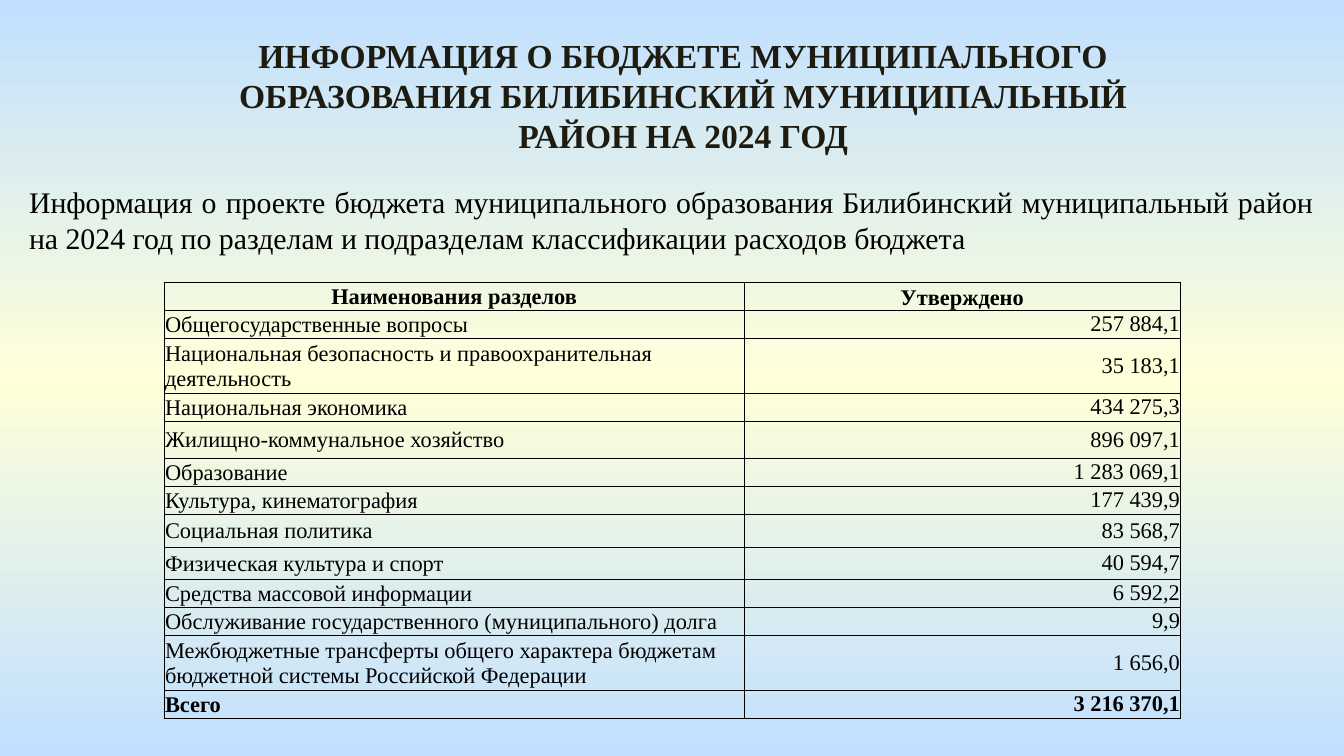
import copy

import pptx
import pptx.dml.color
import pptx.enum.text
import pptx.oxml
import pptx.oxml.ns
import pptx.util

Cm = pptx.util.Cm
Pt = pptx.util.Pt
ALIGN = pptx.enum.text.PP_ALIGN
ANCHOR = pptx.enum.text.MSO_ANCHOR

# Content
TITLE = ("ИНФОРМАЦИЯ О БЮДЖЕТЕ МУНИЦИПАЛЬНОГО ОБРАЗОВАНИЯ "
         "БИЛИБИНСКИЙ МУНИЦИПАЛЬНЫЙ РАЙОН НА 2024 ГОД")
SUBTITLE = ("Информация о проекте бюджета муниципального образования Билибинский "
            "муниципальный район на 2024 год по разделам и подразделам "
            "классификации расходов бюджета")
# Section name, approved amount, row height in cm
ROWS = [
    ("Наименования разделов", "Утверждено", 0.53),
    ("Общегосударственные вопросы", "257 884,1", 0.53),
    ("Национальная безопасность и правоохранительная деятельность", "35 183,1", 1.04),
    ("Национальная экономика", "434 275,3", 0.53),
    ("Жилищно-коммунальное хозяйство", "896 097,1", 0.7),
    ("Образование", "1 283 069,1", 0.53),
    ("Культура, кинематография", "177 439,9", 0.53),
    ("Социальная политика", "83 568,7", 0.62),
    ("Физическая культура и спорт", "40 594,7", 0.61),
    ("Средства массовой информации", "6 592,2", 0.53),
    ("Обслуживание государственного (муниципального) долга", "9,9", 0.53),
    ("Межбюджетные трансферты общего характера бюджетам бюджетной системы "
     "Российской Федерации", "1 656,0", 1.04),
    ("Всего", "3 216 370,1", 0.53),
]
COLUMNS = (10.97, 8.23)
FONT = "Times New Roman"
COLORS = {"sky": "C1E0FF", "cream": "FFFFD9", "title": "1E1C11", "black": "000000"}


def rgb(name):
    return pptx.dml.color.RGBColor.from_string(COLORS[name])


def write(frame, text, size=12, color="black", bold=False, align=ALIGN.LEFT):
    frame.word_wrap = True
    para = frame.paragraphs[0]
    para.alignment = align
    span = para.add_run()
    span.text = text
    span.font.name = FONT
    span.font.size = Pt(size)
    span.font.bold = bold
    span.font.color.rgb = rgb(color)


def add_borders(cell):
    properties = cell._tc.get_or_add_tcPr()
    for side in ("lnL", "lnR", "lnT", "lnB"):
        properties.append(pptx.oxml.parse_xml(
            f'<a:{side} {pptx.oxml.ns.nsdecls("a")} w="{Pt(0.5)}"><a:solidFill>'
            f'<a:srgbClr val="{COLORS["black"]}"/></a:solidFill></a:{side}>'))


deck = pptx.Presentation()
deck.slide_width, deck.slide_height = Cm(25.4), Cm(14.29)
page = deck.slides.add_slide(deck.slide_layouts[6])

# Background: sky, cream, sky from top to bottom
fill = page.background.fill
fill.gradient()
fill.gradient_angle = 270
for stop in fill.gradient_stops:
    stop.color.rgb = rgb("sky")
stops = page.element.find(".//" + pptx.oxml.ns.qn("a:gsLst"))
stops.insert(1, copy.deepcopy(stops[0]))
for stop, position in zip(fill.gradient_stops, (0, 0.5, 1)):
    stop.position = position
fill.gradient_stops[1].color.rgb = rgb("cream")

# Title and subtitle
box = page.shapes.add_textbox(Cm(3.1), Cm(0.53), Cm(19.63), Cm(2.57))
write(box.text_frame, TITLE, size=18, color="title", bold=True, align=ALIGN.CENTER)
box = page.shapes.add_textbox(Cm(0.3), Cm(3.35), Cm(24.79), Cm(1.63))
write(box.text_frame, SUBTITLE, size=16, align=ALIGN.JUSTIFY)

# Budget table
heights = [height for _, _, height in ROWS]
table = page.shapes.add_table(len(ROWS), len(COLUMNS), Cm(3.1), Cm(5.33),
                              Cm(sum(COLUMNS)), Cm(sum(heights))).table
table.first_row = table.horz_banding = False
for column, width in zip(table.columns, COLUMNS):
    column.width = Cm(width)
for r, (name, amount, height) in enumerate(ROWS):
    table.rows[r].height = Cm(height)
    header = r == 0
    for c, text in enumerate((name, amount)):
        cell = table.cell(r, c)
        inset = 0.02 if header or c == 0 else 0
        cell.margin_left = cell.margin_right = cell.margin_top = Cm(inset)
        cell.margin_bottom = 0
        cell.vertical_anchor = ANCHOR.BOTTOM if header and c == 1 else ANCHOR.MIDDLE
        add_borders(cell)
        cell.fill.background()
        align = ALIGN.CENTER if header else (ALIGN.LEFT, ALIGN.RIGHT)[c]
        write(cell.text_frame, text, bold=r in (0, len(ROWS) - 1), align=align)

deck.save("out.pptx")
